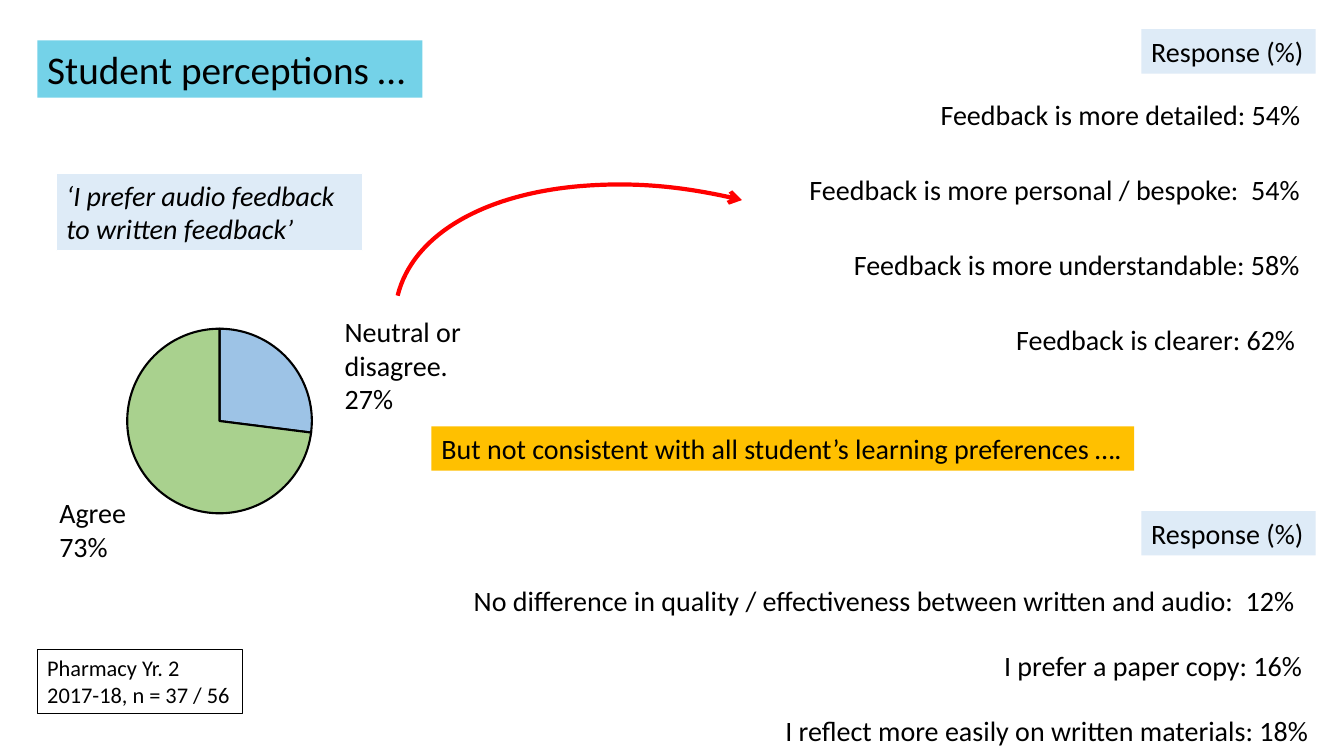
from lxml import etree
from pptx import Presentation
from pptx.chart.data import CategoryChartData
from pptx.dml.color import RGBColor
from pptx.enum.chart import XL_CHART_TYPE
from pptx.enum.shapes import MSO_SHAPE
from pptx.enum.text import MSO_ANCHOR, MSO_AUTO_SIZE, PP_ALIGN
from pptx.oxml import parse_xml
from pptx.oxml.ns import nsdecls, qn
from pptx.util import Inches, Pt

FONT = "Calibri"
BLACK, WHITE, PALE = "000000", "FFFFFF", "DEEBF7"
CYAN, AMBER, RED = "74D2E8", "FFC000", "FF0000"
BLUE, GREEN = "9DC3E6", "A9D18E"
RIGHT = 13.04

# Statement, box width, right edge
PROS = [
    ("Feedback is more detailed: 54%", 3.81, RIGHT),
    ("Feedback is more personal / bespoke:  54%", 5.11, RIGHT),
    ("Feedback is more understandable: 58%", 4.67, RIGHT),
    ("Feedback is clearer: 62%", 3.06, RIGHT),
]
CONS = [
    ("No difference in quality / effectiveness between written and audio:  12%",
     8.44, RIGHT),
    ("I prefer a paper copy: 16%", 3.18, RIGHT),
    ("I reflect more easily on written materials: 18%", 5.51, 13.2),
]


def color(code):
    return RGBColor.from_string(code)


def paint(shape, fill=None, line=None, width=0.75):
    """Set fill and outline; None leaves either one empty."""
    shape.shadow.inherit = False
    for part, code in ((shape.fill, fill), (shape.line.fill, line)):
        if code:
            part.solid()
            part.fore_color.rgb = color(code)
        else:
            part.background()
    if line:
        shape.line.width = Pt(width)


def add_box(slide, text, place, fill=None, line=None, wrap=False, **style):
    """Add a text box; each line of the text is a paragraph."""
    box = slide.shapes.add_shape(MSO_SHAPE.RECTANGLE, *map(Inches, place))
    paint(box, fill, line)
    frame = box.text_frame
    frame.text = text
    frame.word_wrap = wrap
    frame.auto_size = MSO_AUTO_SIZE.SHAPE_TO_FIT_TEXT
    frame.vertical_anchor = MSO_ANCHOR.TOP
    look = {"name": FONT, "size": Pt(20), **style}
    for para in frame.paragraphs:
        para.alignment = PP_ALIGN.LEFT
        para.font.color.rgb = color(BLACK)
        for key, value in look.items():
            setattr(para.font, key, value)


def add_list(slide, rows, head, first, last):
    """Add the heading tag, then statements evenly from first to last top."""
    add_box(slide, "Response (%)", (11.32, head, 1.73, 0.44), PALE)
    step = (last - first) / (len(rows) - 1)
    for i, (text, width, right) in enumerate(rows):
        place = (right - width, first + i * step, width, 0.44)
        add_box(slide, text, place, WHITE)


def add_pie(slide, place):
    data = CategoryChartData()
    data.categories = ["1", "2"]
    data.add_series("Series 1", (27, 73))
    frame = slide.shapes.add_chart(XL_CHART_TYPE.PIE, *map(Inches, place), data)
    chart = frame.chart
    chart.has_legend = chart.has_title = False
    for key, value in {"name": FONT, "size": Pt(10)}.items():
        setattr(chart.font, key, value)
    chart.font.color.rgb = color(BLACK)
    plot = chart.plots[0]
    plot.vary_by_categories = False
    for i, code in enumerate((BLUE, GREEN)):
        form = plot.series[0].points[i].format
        form.fill.solid()
        form.fill.fore_color.rgb = color(code)
        form.line.color.rgb = color(BLACK)
        form.line.width = Pt(1.5)
    set_plot(chart, x=0.13, y=0.01, w=0.78, h=0.86)


def set_plot(chart, **spots):
    """Fix the inner plot area as shares of the chart frame."""
    modes = '<c:xMode val="edge"/><c:yMode val="edge"/>'
    sizes = "".join(f'<c:{key} val="{val}"/>' for key, val in spots.items())
    area = chart.element.find(".//" + qn("c:plotArea"))
    for old in area.findall(qn("c:layout")):
        area.remove(old)
    area.insert(0, parse_xml(
        f'<c:layout {nsdecls("c")}><c:manualLayout>'
        f'<c:layoutTarget val="inner"/>{modes}{sizes}'
        "</c:manualLayout></c:layout>"))


def add_arc(slide, place, turn):
    arc = slide.shapes.add_shape(MSO_SHAPE.ARC, *map(Inches, place))
    paint(arc, line=RED, width=3)
    arc.rotation = turn
    line = arc.element.spPr.find(qn("a:ln"))
    etree.SubElement(line, qn("a:tailEnd"), type="arrow")


def main():
    deck = Presentation()
    deck.slide_width, deck.slide_height = Inches(13.33), Inches(7.5)
    slide = deck.slides.add_slide(deck.slide_layouts[6])
    add_box(slide, "Pharmacy Yr. 2\n2017-18, n = 37 / 56",
            (0.37, 6.44, 2.04, 0.64), line=BLACK, size=Pt(16))
    add_box(slide, "‘I prefer audio feedback\nto written feedback’",
            (0.56, 1.72, 3.04, 0.77), PALE, WHITE, wrap=True, italic=True)
    add_pie(slide, (0.94, 3.24, 2.38, 2.13))
    add_box(slide, "Agree\n73%", (0.49, 4.87, 0.9, 0.77), WHITE, WHITE,
            wrap=True)
    add_box(slide, "Neutral or disagree.\n27%", (3.32, 3.07, 1.49, 1.11),
            WHITE, WHITE, wrap=True)
    add_list(slide, CONS, head=5.07, first=5.74, last=7.03)
    add_list(slide, PROS, head=0.29, first=0.92, last=3.15)
    add_box(slide,
            "But not consistent with all student’s learning preferences ….",
            (4.28, 4.23, 6.97, 0.44), AMBER)
    add_box(slide, "Student perceptions …", (0.37, 0.4, 3.82, 0.57), CYAN,
            size=Pt(28))
    add_arc(slide, (5.21, 0.58, 3.47, 6.18), 283.8)
    deck.save("out.pptx")


if __name__ == "__main__":
    main()
